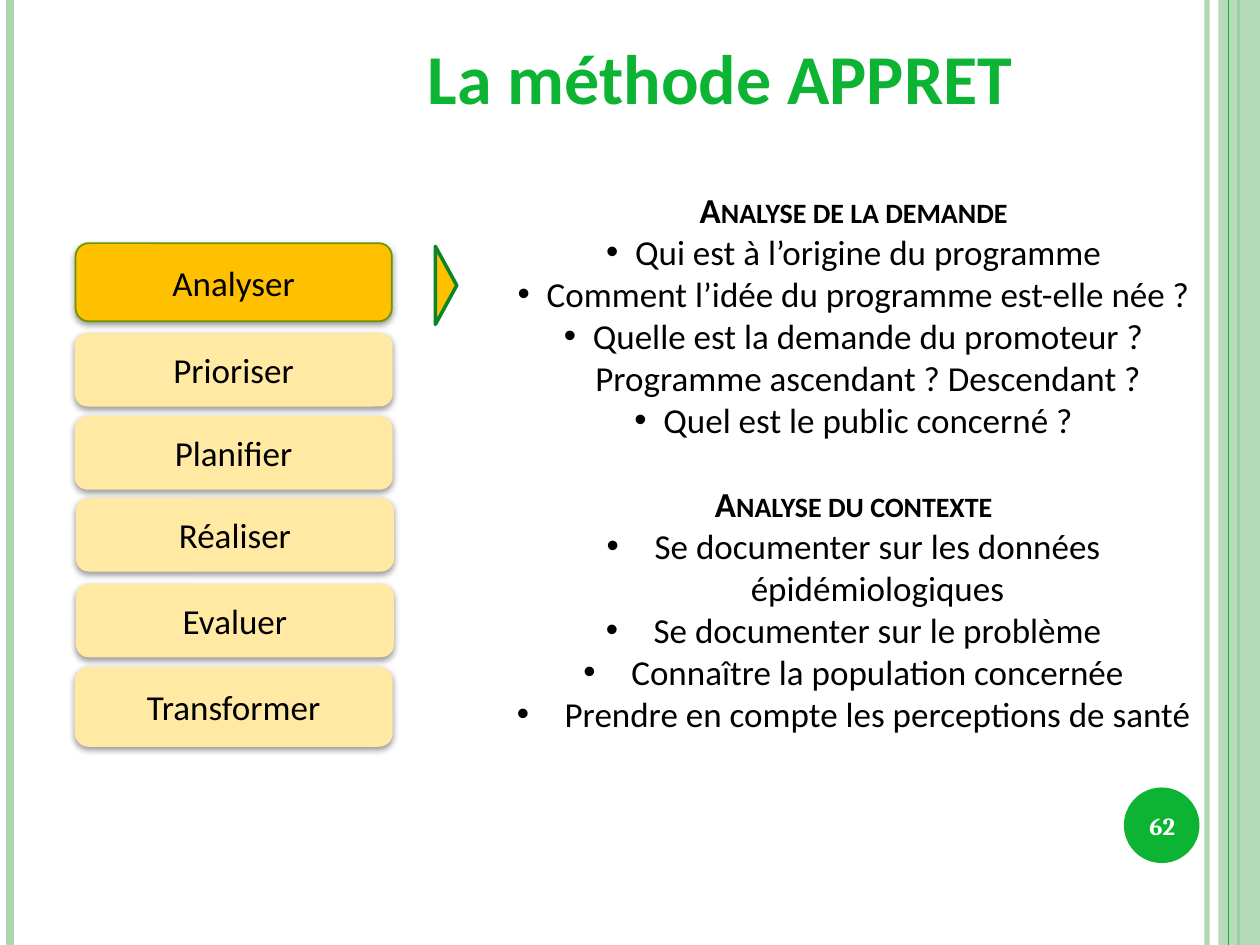
import pptx
import pptx.util
import pptx.dml.color
import pptx.enum.shapes
import pptx.enum.text
import pptx.oxml.ns
from lxml import etree

Inches, Pt = pptx.util.Inches, pptx.util.Pt
RGB = pptx.dml.color.RGBColor.from_string
MSO = pptx.enum.shapes.MSO_SHAPE
qn = pptx.oxml.ns.qn
C = {"green": "0DB434", "pale": "ABD6AE", "dark": "0A8526", "olive": "6B9700",
     "gold": "FFC000", "cream": "FFE9A3", "black": "000000", "white": "FFFFFF"}

prs = pptx.Presentation()
prs.slide_width, prs.slide_height = Inches(10), Inches(7.5)
s = prs.slides.add_slide(prs.slide_layouts[6])


def add_shape(kind, box, fill, line=None, width=1):
    sp = s.shapes.add_shape(kind, *[Inches(v) for v in box])
    sp.shadow.inherit = False
    sp.fill.solid()
    sp.fill.fore_color.rgb = RGB(C[fill])
    if line:
        sp.line.color.rgb = RGB(C[line])
        sp.line.width = Pt(width)
    else:
        sp.line.fill.background()
    return sp


def write(p, text, size, color="black", bold=False, name="Calibri"):
    p.alignment = pptx.enum.text.PP_ALIGN.CENTER
    r = p.add_run()
    r.text = text
    for key, value in {"size": Pt(size), "bold": bold, "name": name}.items():
        setattr(r.font, key, value)
    r.font.color.rgb = RGB(C[color])
    return r


for x, color, width, alpha in [(9.58, "pale", 3, 93), (0.08, "pale", 4.5, 100),
                               (9.83, "green", 1.5, 100), (9.67, "pale", 0, 87),
                               (9.75, "green", 0.75, 100)]:
    if width:
        sp = s.shapes.add_connector(pptx.enum.shapes.MSO_CONNECTOR.STRAIGHT,
                                    Inches(x), 0, Inches(x), Inches(7.5))
        sp.line.color.rgb = RGB(C[color])
        sp.line.width = Pt(width)
        etree.SubElement(sp._element.spPr, qn("a:effectLst"))
    else:
        sp = add_shape(MSO.RECTANGLE, (x, 0, 0.33, 7.5), color)
    if alpha < 100:
        clr = next(sp._element.spPr.iter(qn("a:srgbClr")))
        etree.SubElement(clr, qn("a:alpha"), val=str(alpha * 1000))
add_shape(MSO.OVAL, (8.92, 6.25, 0.6, 0.6), "green")

steps = [("Analyser", 0.6, 1.93, 0.62), ("Prioriser", 0.6, 2.65, 0.57),
         ("Planifier", 0.6, 3.31, 0.57), ("Réaliser", 0.61, 3.96, 0.57),
         ("Evaluer", 0.61, 4.64, 0.57), ("Transformer", 0.6, 5.3, 0.62)]
for text, x, y, h in steps:
    fill, line = ("gold", "olive") if text == "Analyser" else ("cream", "cream")
    sp = add_shape(MSO.ROUNDED_RECTANGLE, (x, y, 2.51, h), fill, line)
    shadow = etree.SubElement(sp._element.spPr.find(qn("a:effectLst")), qn("a:outerShdw"),
                              blurRad=str(Pt(4)), dist=str(Pt(1.6)), dir="5400000",
                              rotWithShape="0")
    clr = etree.SubElement(shadow, qn("a:srgbClr"), val=C["black"])
    etree.SubElement(clr, qn("a:alpha"), val="42000")
    sp.text_frame.vertical_anchor = pptx.enum.text.MSO_ANCHOR.MIDDLE
    write(sp.text_frame.paragraphs[0], text, 20)

sp = add_shape(MSO.ISOSCELES_TRIANGLE, (3.23, 2.18, 0.62, 0.17), "gold", "dark", 2)
sp.rotation = 90

frames = {}
for key, box, anchor in [("title", (1.86, 0.19, 7.71, 0.8), "BOTTOM"),
                         ("analysis", (3.98, 1.62, 5.59, 4.09), "MIDDLE"),
                         ("number", (8.89, 6.27, 0.67, 0.57), "MIDDLE")]:
    tf = s.shapes.add_textbox(*[Inches(v) for v in box]).text_frame
    tf.word_wrap = True
    tf.vertical_anchor = getattr(pptx.enum.text.MSO_ANCHOR, anchor)
    frames[key] = tf
write(frames["title"].paragraphs[0], "La méthode APPRET", 40, "green", True)
write(frames["number"].paragraphs[0], "62", 14, "white", True, "Cambria")

sections = [
    ("Analyse de la demande", 0.23,
     ["Qui est à l’origine du programme",
      "Comment l’idée du programme est-elle née ?",
      "Quelle est la demande du promoteur ? Programme ascendant ? Descendant ?",
      "Quel est le public concerné ?"]),
    ("Analyse du contexte", 0.38,
     ["Se documenter sur les données épidémiologiques",
      "Se documenter sur le problème",
      "Connaître la population concernée",
      "Prendre en compte les perceptions de santé"])]
tf = frames["analysis"]
for i, (heading, indent, items) in enumerate(sections):
    p = tf.add_paragraph() if i else tf.paragraphs[0]
    if i:
        p.space_before = Pt(24)
    write(p, heading, 20, bold=True)._r.get_or_add_rPr().set("cap", "small")
    for item in items:
        p = tf.add_paragraph()
        pPr = p._p.get_or_add_pPr()
        pPr.set("marL", str(Inches(indent)))
        pPr.set("indent", str(-Inches(indent)))
        etree.SubElement(pPr, qn("a:buFont"), typeface="Arial")
        etree.SubElement(pPr, qn("a:buChar"), char="•")
        write(p, item, 20)

prs.save("out.pptx")
